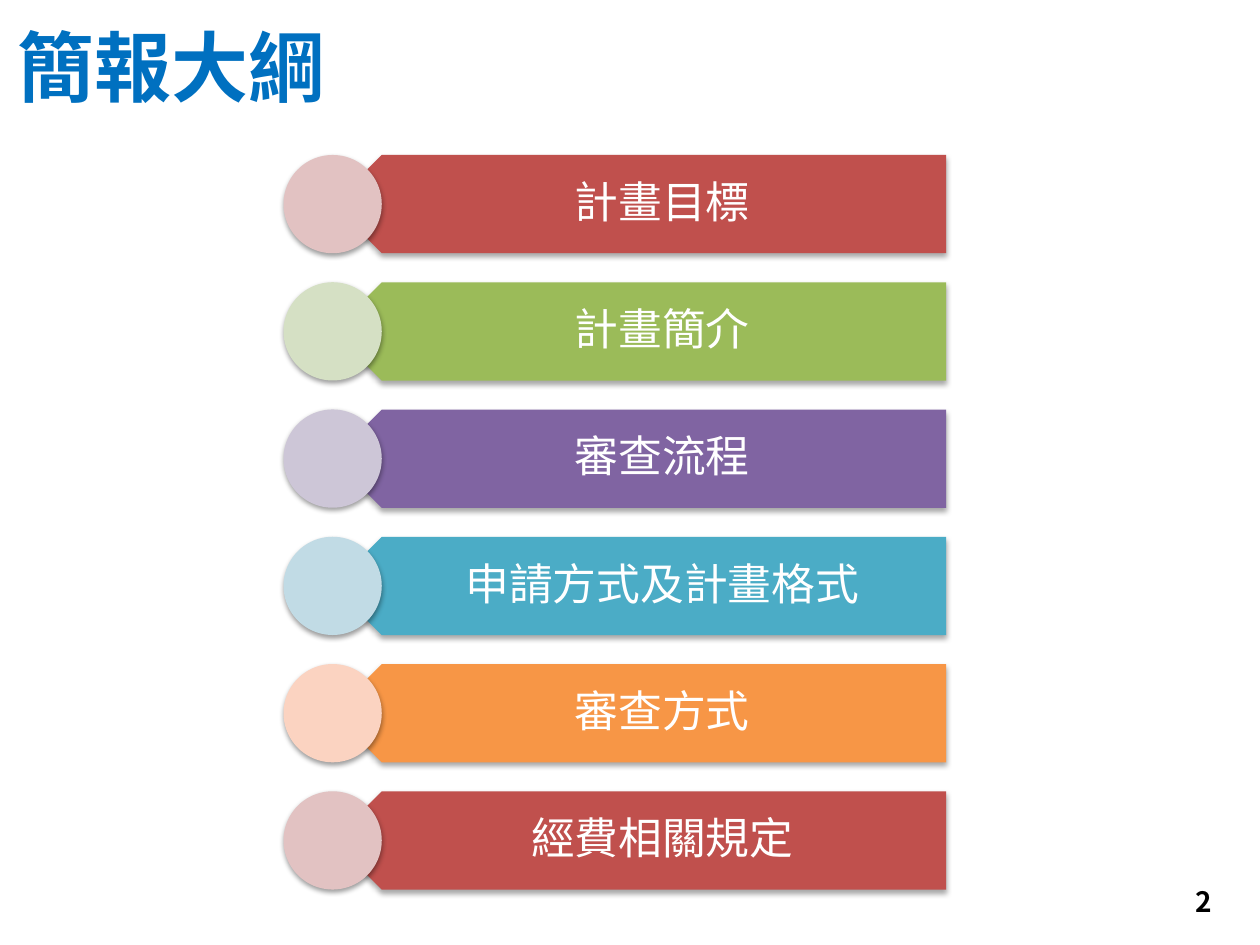
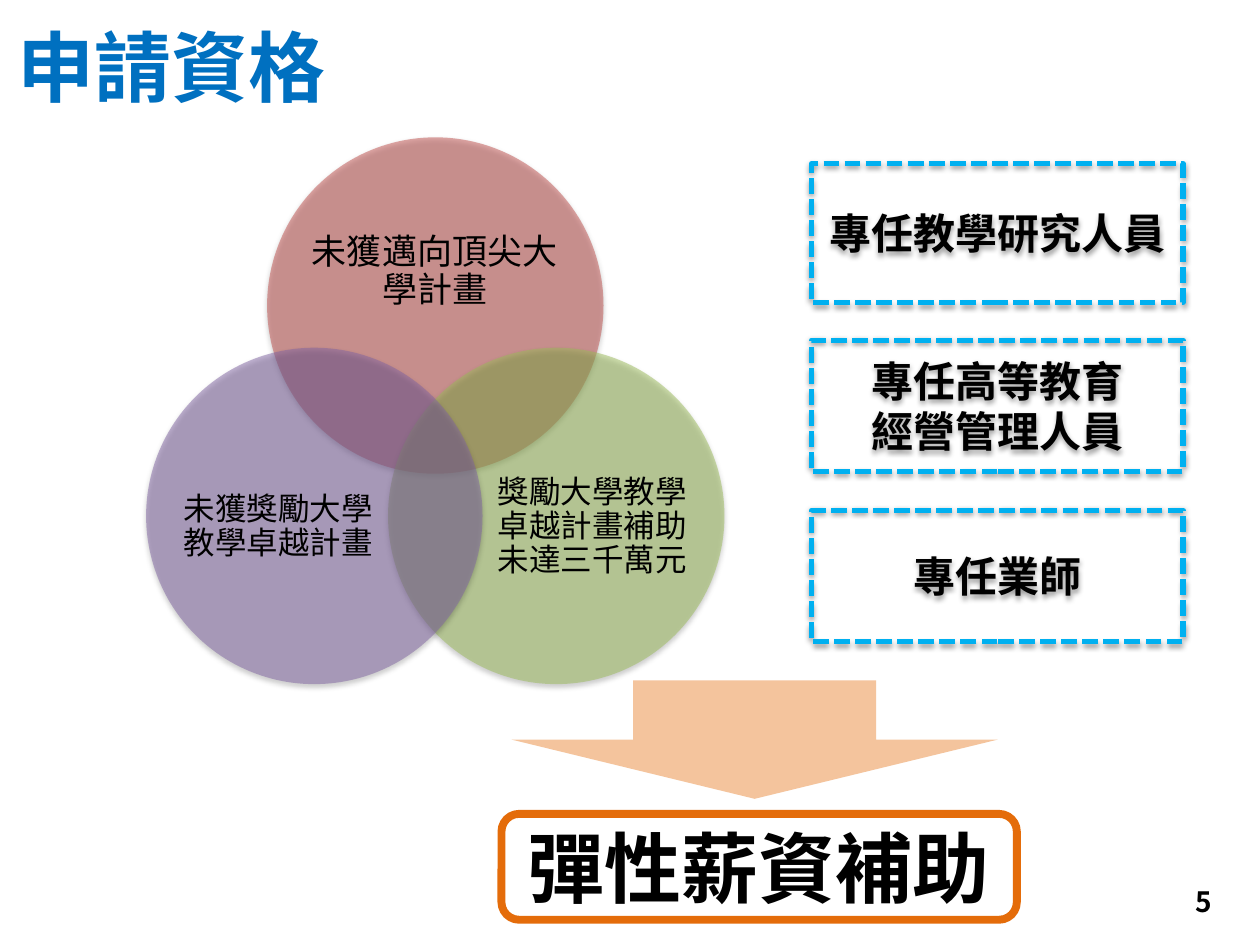
from lxml import etree
from pptx import Presentation, util as u
from pptx.dml.color import RGBColor
from pptx.enum import dml, shapes, text
from pptx.oxml.ns import qn

# Shared style
FACE = "Noto Sans CJK SC"
BLACK = RGBColor(0x00, 0x00, 0x00)
WHITE = RGBColor(0xFF, 0xFF, 0xFF)
BLUE = RGBColor(0x00, 0x70, 0xC0)
SKY = RGBColor(0x00, 0xB0, 0xF0)
RED = RGBColor(0xC0, 0x50, 0x4D)
GREEN = RGBColor(0x9B, 0xBB, 0x59)
PURPLE = RGBColor(0x80, 0x64, 0xA2)
TEAL = RGBColor(0x4B, 0xAC, 0xC6)
ORANGE = RGBColor(0xF7, 0x96, 0x46)
RUST = RGBColor(0xE4, 0x6C, 0x0A)
PINK = RGBColor(0xE2, 0xC2, 0xC2)
MINT = RGBColor(0xD5, 0xE0, 0xC4)
LILAC = RGBColor(0xCD, 0xC6, 0xD7)
ICE = RGBColor(0xC1, 0xDB, 0xE5)
PEACH = RGBColor(0xFB, 0xD3, 0xC1)
KIND = shapes.MSO_SHAPE
ALIGN = text.PP_ALIGN

deck = Presentation()
deck.slide_width, deck.slide_height = u.Inches(10), u.Inches(7.5)
CELL = deck.slide_width // 100  # square grid: 100 columns by 75 rows


def write(shape, lines, size, color=BLACK, bold=False, align=ALIGN.CENTER,
          space=1.0, pads=(1, 0.5, 1, 0.5)):
    """Fill a shape with text; pads are left, top, right, bottom in cells."""
    frame = shape.text_frame
    frame.text = lines
    form = dict(word_wrap=True, auto_size=text.MSO_AUTO_SIZE.NONE,
                vertical_anchor=text.MSO_ANCHOR.MIDDLE)
    for side, pad in zip(("left", "top", "right", "bottom"), pads):
        form["margin_" + side] = int(pad * CELL)
    for key, val in form.items():
        setattr(frame, key, val)
    for para in frame.paragraphs:
        para.alignment, para.line_spacing = align, space
        for run in para.runs:
            for key, val in dict(size=u.Pt(size), bold=bold, name=FACE).items():
                setattr(run.font, key, val)
            run.font.color.rgb = color
            east = etree.SubElement(run._r.get_or_add_rPr(), qn("a:ea"))
            east.set("typeface", FACE)


def draw(slide, kind, box, fill=None, alpha=None, line=None, width=0, drop=0, shade=38):
    """Add a preset shape; alpha and shade are percentages, drop is in points."""
    shape = slide.shapes.add_shape(kind, *(int(n * CELL) for n in box))
    shape.shadow.inherit = False
    if fill is None:
        shape.fill.background()
    else:
        shape.fill.solid()
        shape.fill.fore_color.rgb = fill
    if alpha:
        tint = shape._element.spPr.find(qn("a:solidFill"))[0]
        etree.SubElement(tint, qn("a:alpha"), val=str(alpha * 1000))
    if line is None:
        shape.line.fill.background()
    else:
        shape.line.color.rgb = line
        shape.line.width = u.Pt(width)
    if drop:
        cast = etree.SubElement(
            shape._element.spPr.find(qn("a:effectLst")), qn("a:outerShdw"),
            blurRad=str(u.Pt(3.1)), dist=str(u.Pt(drop)), dir="5400000", rotWithShape="0")
        dark = etree.SubElement(cast, qn("a:srgbClr"), val=str(BLACK))
        etree.SubElement(dark, qn("a:alpha"), val=str(shade * 1000))
    return shape


# Titles and page numbers
pages = []
for head, num in (("簡報大綱", "2"), ("申請資格", "5")):
    slide = deck.slides.add_slide(deck.slide_layouts[5])
    title = slide.shapes.title
    for key, val in dict(left=0.4, top=0.5, width=90, height=9.4).items():
        setattr(title, key, int(val * CELL))
    write(title, head, 44, BLUE, True, ALIGN.LEFT)
    mark = slide.shapes.add_textbox(*(int(n * CELL) for n in (73.9, 69.5, 23.3, 4)))
    write(mark, num, 16, bold=True, align=ALIGN.RIGHT)
    pages.append(slide)
agenda, rules = pages

# Agenda: six banners, each with a disc over its point
TOP, STEP, HIGH = 12.3, 10.1, 7.8
topics = (("計畫目標", RED, PINK), ("計畫簡介", GREEN, MINT),
          ("審查流程", PURPLE, LILAC), ("申請方式及計畫格式", TEAL, ICE),
          ("審查方式", ORANGE, PEACH), ("經費相關規定", RED, PINK))
for row, (topic, color, pale) in enumerate(topics):
    y = TOP + row * STEP
    band = draw(agenda, KIND.PENTAGON, (26.4, y, 48.7, HIGH), color, drop=1.8, shade=35)
    band.rotation = 180
    label = agenda.shapes.add_textbox(*(int(n * CELL) for n in (28.4, y, 46.8, HIGH)))
    write(label, topic, 25, WHITE, space=0.9, pads=(3.4, 1, 1.9, 1))
    draw(agenda, KIND.OVAL, (22.5, y, HIGH, HIGH), pale, drop=1.6)

# Eligibility: three overlapping circles
SIZE = 26.7
rings = (("未獲邁向頂尖大學計畫", RED, 21.2, 10.9, (24.7, 15.6, 19.6, 12), 20),
         ("獎勵大學教學卓越計畫補助未達三千萬元", GREEN, 30.8, 27.6, (39, 34.5, 16, 14.7), 18),
         ("未獲獎勵大學教學卓越計畫", PURPLE, 11.6, 27.6, (14.1, 34.5, 16, 14.7), 18))
for words, color, x, y, area, size in rings:
    draw(rules, KIND.OVAL, (x, y, SIZE, SIZE), color, alpha=50, drop=1.6)
    label = rules.shapes.add_textbox(*(int(n * CELL) for n in area))
    write(label, words, size, space=0.9, pads=(0, 0, 0, 0))

# Arrow down to the outcome
draw(rules, KIND.DOWN_ARROW, (40.6, 54, 38.6, 9.4), RUST, alpha=40)
goal = draw(rules, KIND.FLOWCHART_ALTERNATE_PROCESS, (39.8, 64.6, 40.9, 8.4),
            line=RUST, width=4.5)
write(goal, "彈性薪資補助", 44, bold=True)

# Dashed boxes of eligible staff
staff = (("專任教學研究人員", 13, 11), ("專任高等教育\n經營管理人員", 27, 10.4),
         ("專任業師", 40.5, 10.4))
for role, y, high in staff:
    card = draw(rules, KIND.RECTANGLE, (64.4, y, 29.5, high), line=SKY, width=3, drop=1.6)
    card.line.dash_style = dml.MSO_LINE.SQUARE_DOT
    write(card, role, 24, bold=True)

deck.save("out.pptx")
